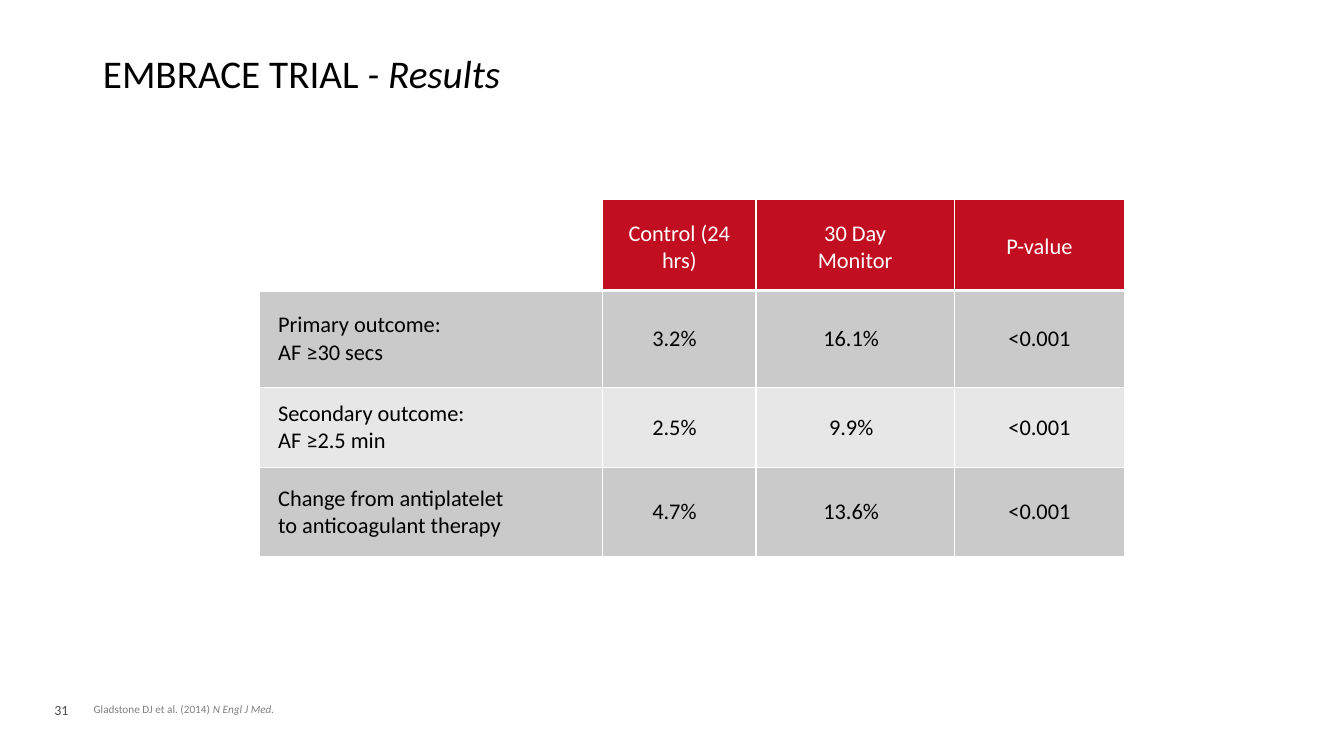
import pptx
import pptx.util
import pptx.dml.color
import pptx.enum.text
import pptx.oxml
import pptx.oxml.ns

Cm, Pt = pptx.util.Cm, pptx.util.Pt
RGBColor = pptx.dml.color.RGBColor
ALIGN, ANCHOR = pptx.enum.text.PP_ALIGN, pptx.enum.text.MSO_ANCHOR

BLACK = RGBColor(0x00, 0x00, 0x00)
WHITE = RGBColor(0xFF, 0xFF, 0xFF)
RED = RGBColor(0xC1, 0x0E, 0x20)
DARK_BAND = RGBColor(0xCA, 0xCA, 0xCA)
LIGHT_BAND = RGBColor(0xE7, 0xE7, 0xE7)
GRAY = RGBColor(0x80, 0x80, 0x80)
NUMBER_GRAY = RGBColor(0x4D, 0x4D, 0x4F)


def add_run(p, text, size, color, italic=False):
    r = p.add_run()
    r.text = text
    formats = {"name": "Calibri", "size": Pt(size), "bold": False, "italic": italic}
    for key, value in formats.items():
        setattr(r.font, key, value)
    r.font.color.rgb = color


def set_borders(cell, widths):
    tcPr = cell._tc.get_or_add_tcPr()
    for i, (side, width) in enumerate(widths.items()):
        tcPr.insert(i, pptx.oxml.parse_xml(
            f'<a:ln{side} {pptx.oxml.ns.nsdecls("a")} w="{Pt(width)}">'
            f'<a:solidFill><a:srgbClr val="{WHITE}"/></a:solidFill></a:ln{side}>'))


prs = pptx.Presentation()
prs.slide_width, prs.slide_height = Cm(33.87), Cm(19.05)
slide = prs.slides.add_slide(prs.slide_layouts[5])

# Title
title = slide.shapes.title
frame = {"left": Cm(2.34), "top": Cm(1.02), "width": Cm(29.21), "height": Cm(1.55)}
for key, value in frame.items():
    setattr(title, key, value)
tf = title.text_frame
tf.auto_size = pptx.enum.text.MSO_AUTO_SIZE.NONE
tf.vertical_anchor = ANCHOR.BOTTOM
p = tf.paragraphs[0]
p.alignment, p.line_spacing = ALIGN.LEFT, 0.9
add_run(p, "EMBRACE TRIAL ", 28, BLACK)
add_run(p, "- Results", 28, BLACK, italic=True)

# Results table
rows = [
    ["", "Control (24 hrs)", "30 Day Monitor", "P-value"],
    ["Primary outcome:\nAF ≥30 secs", "3.2%", "16.1%", "<0.001"],
    ["Secondary outcome:\nAF ≥2.5 min", "2.5%", "9.9%", "<0.001"],
    ["Change from antiplatelet\nto anticoagulant therapy", "4.7%", "13.6%", "<0.001"],
]
col_widths = [8.66, 3.86, 5.0, 4.29]
row_heights = [2.29, 2.44, 2.03, 2.24]
header_margins = [(0, 0), (0.42, 0.42), (0.9, 0.9), (0, 0)]
body_margins = [(0.48, 0.25), (0.25, 0.5), (0.25, 0.45), (0.25, 0.25)]

table = slide.shapes.add_table(4, 4, Cm(6.53), Cm(5.03),
                               Cm(sum(col_widths)), Cm(sum(row_heights))).table
table.first_row = table.horz_banding = False
for col, width in zip(table.columns, col_widths):
    col.width = Cm(width)
for i, (texts, height) in enumerate(zip(rows, row_heights)):
    table.rows[i].height = Cm(height)
    header = i == 0
    for j, text in enumerate(texts):
        cell = table.cell(i, j)
        cell.vertical_anchor = ANCHOR.MIDDLE
        left, right = (header_margins if header else body_margins)[j]
        cell.margin_left, cell.margin_right = Cm(left), Cm(right)
        if header:
            cell.margin_top, cell.margin_bottom = Cm(0.1), 0
        if header and j == 0:
            cell.fill.background()
        else:
            cell.fill.solid()
            cell.fill.fore_color.rgb = RED if header else DARK_BAND if i % 2 else LIGHT_BAND
        set_borders(cell, {"L": 1, "R": 1, "T": 3 if i == 1 else 1, "B": 3 if header else 1})
        for k, line in enumerate(text.split("\n")):
            p = cell.text_frame.add_paragraph() if k else cell.text_frame.paragraphs[0]
            p.alignment = ALIGN.CENTER if j else ALIGN.LEFT
            if line:
                add_run(p, line, 16, WHITE if header else BLACK)

# Slide number
sp = slide.shapes.add_textbox(Cm(1.12), Cm(17.55), Cm(0.99), Cm(0.69))
add_run(sp.text_frame.paragraphs[0], "31", 10, NUMBER_GRAY)

# Citation
sp = slide.shapes.add_textbox(Cm(2.36), Cm(17.7), Cm(23.83), Cm(0.33))
tf = sp.text_frame
tf.word_wrap = True
for side in ("left", "top", "right", "bottom"):
    setattr(tf, f"margin_{side}", 0)
p = tf.paragraphs[0]
add_run(p, "Gladstone DJ et al. (2014) ", 8, GRAY)
add_run(p, "N Engl J Med.", 8, GRAY, italic=True)

prs.save("out.pptx")
